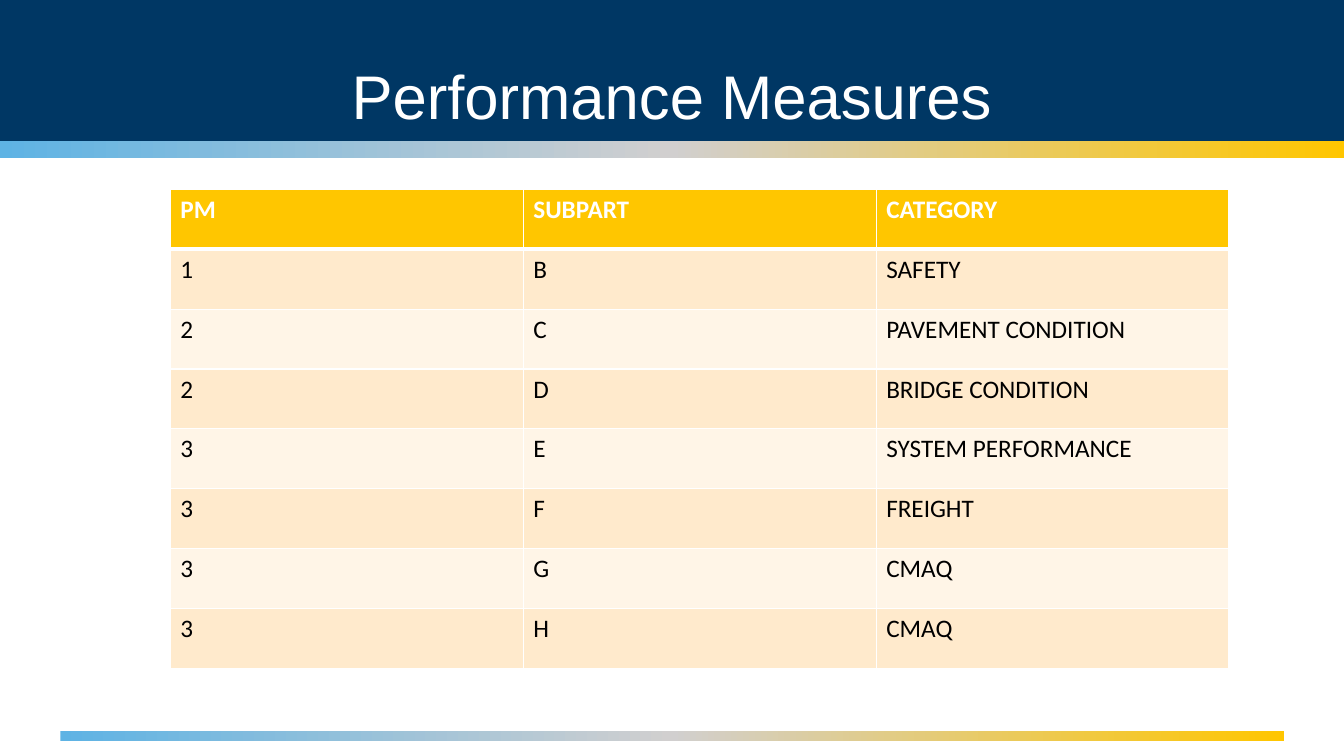
from copy import deepcopy
from dataclasses import dataclass

from lxml import etree
from pptx import Presentation
from pptx.dml.color import RGBColor
from pptx.enum import shapes, text
from pptx.oxml.ns import qn
from pptx.util import Inches, Pt


@dataclass(frozen=True)
class Theme:
    navy: str = "003764"
    gold: str = "FFC600"
    white: str = "FFFFFF"
    black: str = "000000"
    bands: tuple = ("FFEACC", "FFF5E7")
    gradient: tuple = ((0, "5EB3E4"), (0.5, "D1CFCF"), (1, "FFC600"))
    title_font: str = "Arial"
    table_font: str = "Calibri"
    title_size: int = 44
    table_size: int = 18


THEME = Theme()
SLIDE_WIDTH, SLIDE_HEIGHT = 13.33, 7.5
MEASURES = [
    ("PM", "SUBPART", "CATEGORY"),
    ("1", "B", "SAFETY"),
    ("2", "C", "PAVEMENT CONDITION"),
    ("2", "D", "BRIDGE CONDITION"),
    ("3", "E", "SYSTEM PERFORMANCE"),
    ("3", "F", "FREIGHT"),
    ("3", "G", "CMAQ"),
    ("3", "H", "CMAQ"),
]


def rgb(color):
    return RGBColor.from_string(color)


def add_run(paragraph, words, font, size, color, bold=False):
    run = paragraph.add_run()
    run.text = words
    run.font.name = font
    run.font.size = Pt(size)
    run.font.bold = bold
    run.font.color.rgb = rgb(color)


def add_bar(slide, left, top, width, height):
    shape = slide.shapes.add_shape(
        shapes.MSO_SHAPE.RECTANGLE, *map(Inches, (left, top, width, height)))
    shape.shadow.inherit = False
    shape.line.fill.background()
    return shape


def add_gradient_bar(slide, left, top, width, height):
    fill = add_bar(slide, left, top, width, height).fill
    fill.gradient()
    fill.gradient_angle = 0
    stops = fill.gradient_stops
    first = stops[0]._gs
    first.addnext(deepcopy(first))
    for stop, (position, color) in zip(fill.gradient_stops, THEME.gradient):
        stop.position = position
        stop.color.rgb = rgb(color)


def add_header(slide, left, top, width):
    """Place the navy banner, its gradient edge and the title over them."""
    banner = add_bar(slide, left, top, width, 1.4)
    banner.fill.solid()
    banner.fill.fore_color.rgb = rgb(THEME.navy)
    add_gradient_bar(slide, left, top + 1.4, width, 0.17)

    title = slide.shapes.title
    title.left, title.top = Inches(left), Inches(top + 0.39)
    title.width, title.height = Inches(width), Inches(1.19)
    title.text_frame.vertical_anchor = text.MSO_ANCHOR.MIDDLE
    paragraph = title.text_frame.paragraphs[0]
    paragraph.alignment = text.PP_ALIGN.CENTER
    paragraph.line_spacing = 0.9
    add_run(paragraph, "Performance Measures",
            THEME.title_font, THEME.title_size, THEME.white)
    slide.shapes._spTree.append(title._element)


def set_borders(cell, top_width, bottom_width):
    properties = cell._tc.get_or_add_tcPr()
    widths = {"a:lnL": 1, "a:lnR": 1, "a:lnT": top_width, "a:lnB": bottom_width}
    for side, width in widths.items():
        line = etree.SubElement(properties, qn(side), w=str(Pt(width)))
        fill = etree.SubElement(line, qn("a:solidFill"))
        etree.SubElement(fill, qn("a:srgbClr"), val=THEME.white)


def add_measures_table(slide, left, top, width, height):
    row_count, column_count = len(MEASURES), len(MEASURES[0])
    table = slide.shapes.add_table(
        row_count, column_count, *map(Inches, (left, top, width, height))).table
    for column in table.columns:
        column.width = Inches(width / column_count)
    for row_index, values in enumerate(MEASURES):
        table.rows[row_index].height = Inches(height / row_count)
        is_header = row_index == 0
        background = THEME.gold if is_header else THEME.bands[(row_index - 1) % 2]
        for column_index, value in enumerate(values):
            cell = table.cell(row_index, column_index)
            set_borders(cell, 3 if row_index == 1 else 1, 3 if is_header else 1)
            cell.fill.solid()
            cell.fill.fore_color.rgb = rgb(background)
            add_run(cell.text_frame.paragraphs[0], value,
                    THEME.table_font, THEME.table_size,
                    THEME.white if is_header else THEME.black, is_header)


def main():
    presentation = Presentation()
    presentation.slide_width = Inches(SLIDE_WIDTH)
    presentation.slide_height = Inches(SLIDE_HEIGHT)
    title_only = presentation.slide_layouts.get_by_name("Title Only")
    slide = presentation.slides.add_slide(title_only)
    add_header(slide, 0, 0, SLIDE_WIDTH)
    add_gradient_bar(slide, 0.6, 7.25, 12.14, 0.1)
    add_measures_table(slide, 1.69, 1.88, 10.5, 4.75)
    presentation.save("out.pptx")


if __name__ == "__main__":
    main()
